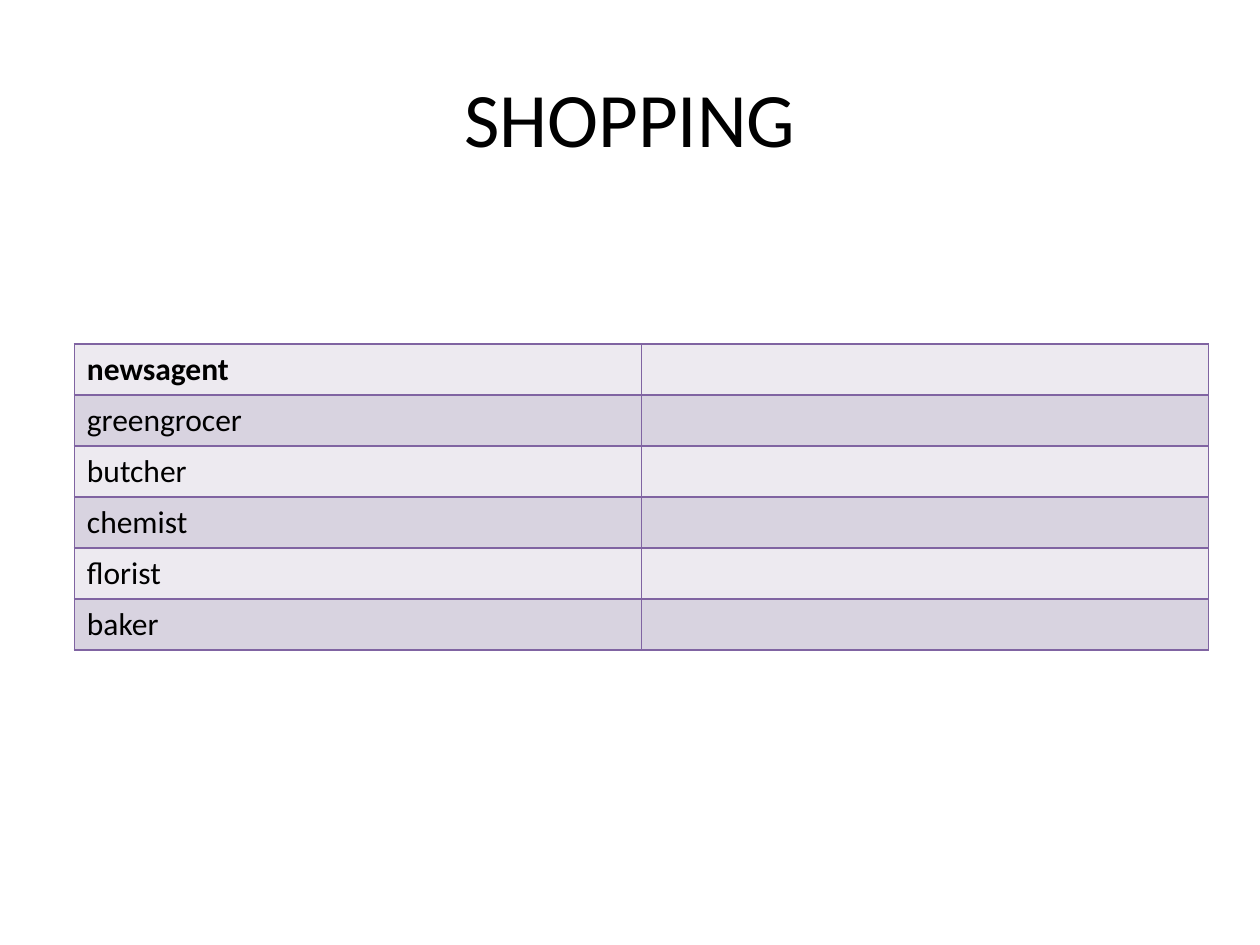
from lxml.etree import SubElement
from pptx import Presentation
from pptx.dml.color import RGBColor as Rgb
from pptx.enum.text import MSO_ANCHOR as Anchor, PP_ALIGN as Align
from pptx.oxml.ns import qn
from pptx.util import Inches, Pt

COLORS = {"ink": "000000", "rule": "8064A2", "light": "EDEAF0", "dark": "D8D3E0"}
SHOPS = ["newsagent", "greengrocer", "butcher", "chemist", "florist", "baker"]
WIDTH, HEIGHT = Inches(10), Inches(7.5)
COLUMNS = 2


def area(left, top, width, height):
    """Turn shares of the slide's size into lengths."""
    return [round(share * side) for share, side in
            zip((left, top, width, height), (WIDTH, HEIGHT) * 2)]


def write(paragraph, words, **formats):
    """Put words in a paragraph with the given font values."""
    run = paragraph.add_run()
    run.text = words
    for key, value in {"name": "Calibri", **formats}.items():
        setattr(run.font, key, value)
    run.font.color.rgb = Rgb.from_string(COLORS["ink"])


def add_title(slide, words):
    """Add the centred heading."""
    heading = slide.shapes.add_textbox(*area(0.05, 0.04, 0.9, 1 / 6)).text_frame
    for key, value in {"word_wrap": True, "vertical_anchor": Anchor.MIDDLE}.items():
        setattr(heading, key, value)
    heading.paragraphs[0].alignment = Align.CENTER
    write(heading.paragraphs[0], words, size=Pt(44))


def style_cell(cell, shade):
    """Rule all four sides of a cell and fill it."""
    properties = cell._tc.get_or_add_tcPr()
    for side in ("lnL", "lnR", "lnT", "lnB"):
        border = SubElement(properties, qn(f"a:{side}"), w=str(Pt(1)))
        ink = SubElement(border, qn("a:solidFill"))
        SubElement(ink, qn("a:srgbClr"), val=COLORS["rule"])
    cell.fill.solid()
    cell.fill.fore_color.rgb = Rgb.from_string(COLORS[shade])


def add_shop_table(slide, shops):
    """List the shops beside an empty column for answers."""
    place = area(0.059, 0.364, 0.9, 0.324)
    grid = slide.shapes.add_table(len(shops), COLUMNS, *place).table
    for flag in ("first_row", "horz_banding"):
        setattr(grid, flag, False)
    for index, shop in enumerate(shops):
        for column in range(COLUMNS):
            style_cell(grid.cell(index, column), ("light", "dark")[index % 2])
        label = grid.cell(index, 0).text_frame.paragraphs[0]
        write(label, shop, size=Pt(18), bold=index == 0)


def main():
    """Build and save the shopping slide."""
    deck = Presentation()
    deck.slide_width, deck.slide_height = WIDTH, HEIGHT
    slide = deck.slides.add_slide(deck.slide_layouts[6])
    add_title(slide, "SHOPPING")
    add_shop_table(slide, SHOPS)
    deck.save("out.pptx")


if __name__ == "__main__":
    main()
